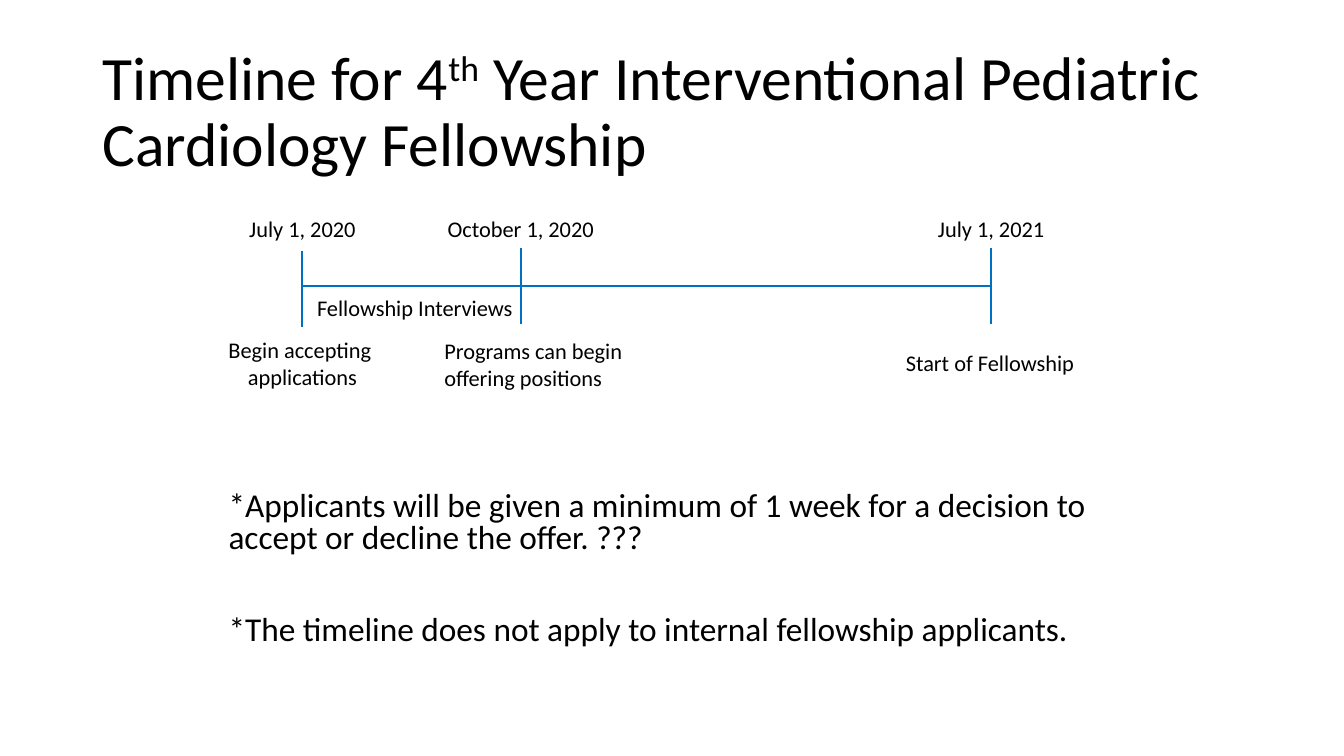
from pptx import Presentation
from pptx.dml.color import RGBColor
from pptx.enum.shapes import MSO_CONNECTOR as Connector
from pptx.enum.text import MSO_ANCHOR as Anchor, PP_ALIGN as Align
from pptx.oxml.ns import qn
from pptx.util import Pt
from lxml.etree import SubElement

COLORS = {"text": "000000", "line": "0070C0"}
FONT = "Calibri"
TITLE = ["Timeline for 4", "th", " Year Interventional Pediatric Cardiology Fellowship"]
NOTES = [
    "*Applicants will be given a minimum of 1 week for a decision to accept or decline the offer. ???",
    "*The timeline does not apply to internal fellowship applicants.",
]
MILESTONES = [
    {"x": 216, "tick_top": 179.3, "date": "July 1, 2020", "date_width": 91.4,
     "event": ["Begin accepting ", "applications"], "event_x": 216,
     "event_top": 236.9, "event_width": 121.7, "align": Align.CENTER, "wrap": False},
    {"x": 372, "tick_top": 177.1, "date": "October 1, 2020", "date_width": 120.2,
     "event": ["Programs can begin", "offering positions"], "event_x": 383,
     "event_top": 237.6, "event_width": 145.4, "align": Align.LEFT, "wrap": True},
    {"x": 708, "tick_top": 177.1, "date": "July 1, 2021", "date_width": 91.4,
     "event": ["Start of Fellowship"], "event_x": 708,
     "event_top": 246.2, "event_width": 136.1, "align": Align.LEFT, "wrap": False},
]
AXIS_Y, TICK_HEIGHT, DATE_TOP = 204, 54, 149.8
LABEL_HEIGHTS = {1: 26.6, 2: 46.1}

deck = Presentation()
deck.slide_width, deck.slide_height = Pt(960), Pt(540)
page = deck.slides.add_slide(deck.slide_layouts[6])


def style(span, size):
    span.font.name = FONT
    span.font.size = Pt(size)
    span.font.color.rgb = RGBColor.from_string(COLORS["text"])


def add_text(left, top, width, height, lines, size, align=Align.LEFT, wrap=True,
             spacing=1.0, gap=0):
    box = page.shapes.add_textbox(Pt(left), Pt(top), Pt(width), Pt(height))
    frame = box.text_frame
    frame.word_wrap = wrap
    frame.text = "\n".join(lines)
    for index, para in enumerate(frame.paragraphs):
        para.alignment = align
        para.line_spacing = spacing
        para.space_before = Pt(gap if index else 0)
        for span in para.runs:
            style(span, size)
    return box


def add_label(center, top, width, lines, align=Align.CENTER, wrap=False):
    add_text(center - width / 2, top, width, LABEL_HEIGHTS[len(lines)], lines, 16, align, wrap)


def add_line(x1, y1, x2, y2):
    line = page.shapes.add_connector(Connector.STRAIGHT, Pt(x1), Pt(y1), Pt(x2), Pt(y2))
    line.line.color.rgb = RGBColor.from_string(COLORS["line"])
    line.line.width = Pt(1.5)
    SubElement(line._element.spPr, qn("a:effectLst"))


title = add_text(66, 28.8, 828, 104.4, [TITLE[0]], 44, spacing=0.9)
title.text_frame.vertical_anchor = Anchor.MIDDLE
for part in TITLE[1:]:
    span = title.text_frame.paragraphs[0].add_run()
    span.text = part
    style(span, 44)
    if part == "th":
        span._r.get_or_add_rPr().set("baseline", "30000")

add_text(156.2, 347.8, 648, 134.6, NOTES, 23.8, spacing=0.8, gap=43)

add_line(MILESTONES[0]["x"], AXIS_Y, MILESTONES[-1]["x"], AXIS_Y)
for stone in MILESTONES:
    add_line(stone["x"], stone["tick_top"], stone["x"], stone["tick_top"] + TICK_HEIGHT)
    add_label(stone["x"], DATE_TOP, stone["date_width"], [stone["date"]])
    add_label(stone["event_x"], stone["event_top"], stone["event_width"],
              stone["event"], stone["align"], stone["wrap"])
add_label(296.3, 206.6, 156.2, ["Fellowship Interviews"])

deck.save("out.pptx")
